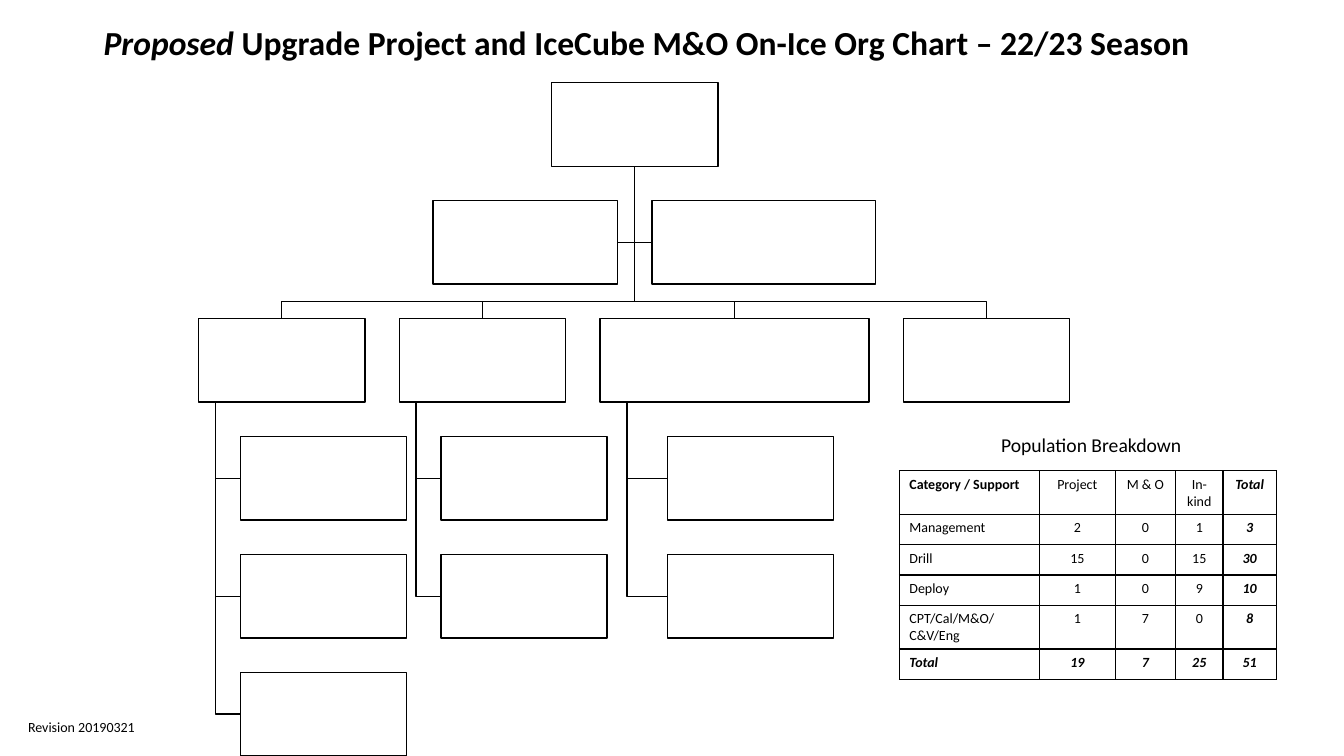
from lxml.etree import SubElement
from pptx import Presentation
from pptx.dml.color import RGBColor
from pptx.enum.shapes import MSO_SHAPE
from pptx.enum.text import PP_ALIGN
from pptx.oxml.ns import qn
from pptx.util import Inches, Pt

COLORS = {"ink": "000000", "paper": "FFFFFF"}
FONT = "Calibri"

BOX_WIDTH, BOX_HEIGHT = 1.65, 0.83
FIRST_TOP, LEVEL_STEP = 0.82, 1.17
GAP = 0.34
LEAD_LEFT = 5.47
ASSISTANT_WIDTHS = (1.83, 2.22)
TEAM_LEFT = 1.97
TEAMS = [(1.65, 3), (1.65, 2), (2.67, 2), (1.65, 0)]  # width, number of sub-teams

POPULATION = [
    ("Category / Support", "Project", "M & O", "In-kind", "Total"),
    ("Management", "2", "0", "1", "3"),
    ("Drill", "15", "0", "15", "30"),
    ("Deploy", "1", "0", "9", "10"),
    ("CPT/Cal/M&O/C&V/Eng", "1", "7", "0", "8"),
    ("Total", "19", "7", "25", "51"),
]
COLUMN_WIDTHS = (1.39, 0.75, 0.6, 0.47, 0.53)
ROW_HEIGHTS = (0.43, 0.3, 0.3, 0.3, 0.3, 0.3)


def color(name):
    return RGBColor.from_string(COLORS[name])


def add_span(para, text, size=10, bold=False, italic=False):
    span = para.add_run()
    span.text = text
    span.font.name = FONT
    span.font.size = Pt(size)
    span.font.bold = bold
    span.font.italic = italic
    span.font.color.rgb = color("ink")


def level_top(level):
    return FIRST_TOP + LEVEL_STEP * level


def set_borders(cell):
    properties = cell._tc.get_or_add_tcPr()
    for position, side in enumerate(("a:lnL", "a:lnR", "a:lnT", "a:lnB")):
        line = properties.makeelement(qn(side), {"w": str(Pt(1))})
        fill = SubElement(line, qn("a:solidFill"))
        SubElement(fill, qn("a:srgbClr"), val=COLORS["ink"])
        properties.insert(position, line)


class OrgChartSlide:
    def __init__(self, page):
        self.page = page

    def outline(self, shape):
        shape.shadow.inherit = False
        shape.line.color.rgb = color("ink")
        shape.line.width = Pt(1)

    def box(self, left, level, width=BOX_WIDTH):
        box = self.page.shapes.add_shape(
            MSO_SHAPE.RECTANGLE, Inches(left), Inches(level_top(level)),
            Inches(width), Inches(BOX_HEIGHT))
        box.fill.solid()
        box.fill.fore_color.rgb = color("paper")
        self.outline(box)

    def branch(self, *points):
        """Draw an open line with square corners through the points."""
        start, *rest = [(Inches(x), Inches(y)) for x, y in points]
        builder = self.page.shapes.build_freeform(*start)
        builder.add_line_segments(rest, close=False)
        line = builder.convert_to_shape()
        line.fill.background()
        self.outline(line)

    def text(self, left, top, width, height, *spans):
        """Add a one-line text box; each span is (text, format dict)."""
        box = self.page.shapes.add_textbox(
            Inches(left), Inches(top), Inches(width), Inches(height))
        box.text_frame.word_wrap = True
        for text, style in spans:
            add_span(box.text_frame.paragraphs[0], text, **style)

    def table(self, left, top, rows):
        frame = self.page.shapes.add_table(
            len(rows), len(rows[0]), Inches(left), Inches(top),
            Inches(sum(COLUMN_WIDTHS)), Inches(sum(ROW_HEIGHTS)))
        table = frame.table
        for column, width in zip(table.columns, COLUMN_WIDTHS):
            column.width = Inches(width)
        for row, height in zip(table.rows, ROW_HEIGHTS):
            row.height = Inches(height)
        for r, values in enumerate(rows):
            for c, value in enumerate(values):
                cell = table.cell(r, c)
                cell.fill.background()
                set_borders(cell)
                para = cell.text_frame.paragraphs[0]
                para.alignment = PP_ALIGN.CENTER if c else PP_ALIGN.LEFT
                is_total = r == len(rows) - 1 or c == len(values) - 1
                add_span(para, value, bold=is_total or r == c == 0, italic=is_total)


def draw_org_chart(slide):
    center = LEAD_LEFT + BOX_WIDTH / 2
    lead_bottom = level_top(0) + BOX_HEIGHT
    assistant_middle = level_top(1) + BOX_HEIGHT / 2
    bus = level_top(2) - GAP / 2
    boxes = [(LEAD_LEFT, 0, BOX_WIDTH)]

    left_width, right_width = ASSISTANT_WIDTHS
    for edge, left, width in (
            (center - GAP / 2, center - GAP / 2 - left_width, left_width),
            (center + GAP / 2, center + GAP / 2, right_width)):
        slide.branch((center, lead_bottom), (center, assistant_middle), (edge, assistant_middle))
        boxes.append((left, 1, width))

    left = TEAM_LEFT
    for width, count in TEAMS:
        middle = left + width / 2
        slide.branch((center, lead_bottom), (center, bus), (middle, bus), (middle, level_top(2)))
        boxes.append((left, 2, width))
        trunk, child_left = left + width / 10, left + width / 4
        for level in range(3, 3 + count):
            child_middle = level_top(level) + BOX_HEIGHT / 2
            slide.branch((trunk, level_top(2) + BOX_HEIGHT), (trunk, child_middle),
                         (child_left, child_middle))
            boxes.append((child_left, level, BOX_WIDTH))
        left += width + GAP

    for box in boxes:
        slide.box(*box)


def main():
    deck = Presentation()
    deck.slide_width, deck.slide_height = Inches(13.33), Inches(7.5)
    slide = OrgChartSlide(deck.slides.add_slide(deck.slide_layouts[6]))
    draw_org_chart(slide)
    slide.text(0.93, 0.17, 11.17, 0.5,
               ("Proposed", {"size": 24, "bold": True, "italic": True}),
               (" Upgrade Project and IceCube M&O On-Ice Org Chart – 22/23 Season",
                {"size": 24, "bold": True}))
    slide.table(8.92, 4.67, POPULATION)
    slide.text(0.18, 7.08, 1.5, 0.27, ("Revision 20190321", {}))
    slide.text(9.83, 4.25, 2.01, 0.34, ("Population Breakdown", {"size": 14}))
    deck.save("out.pptx")


if __name__ == "__main__":
    main()
